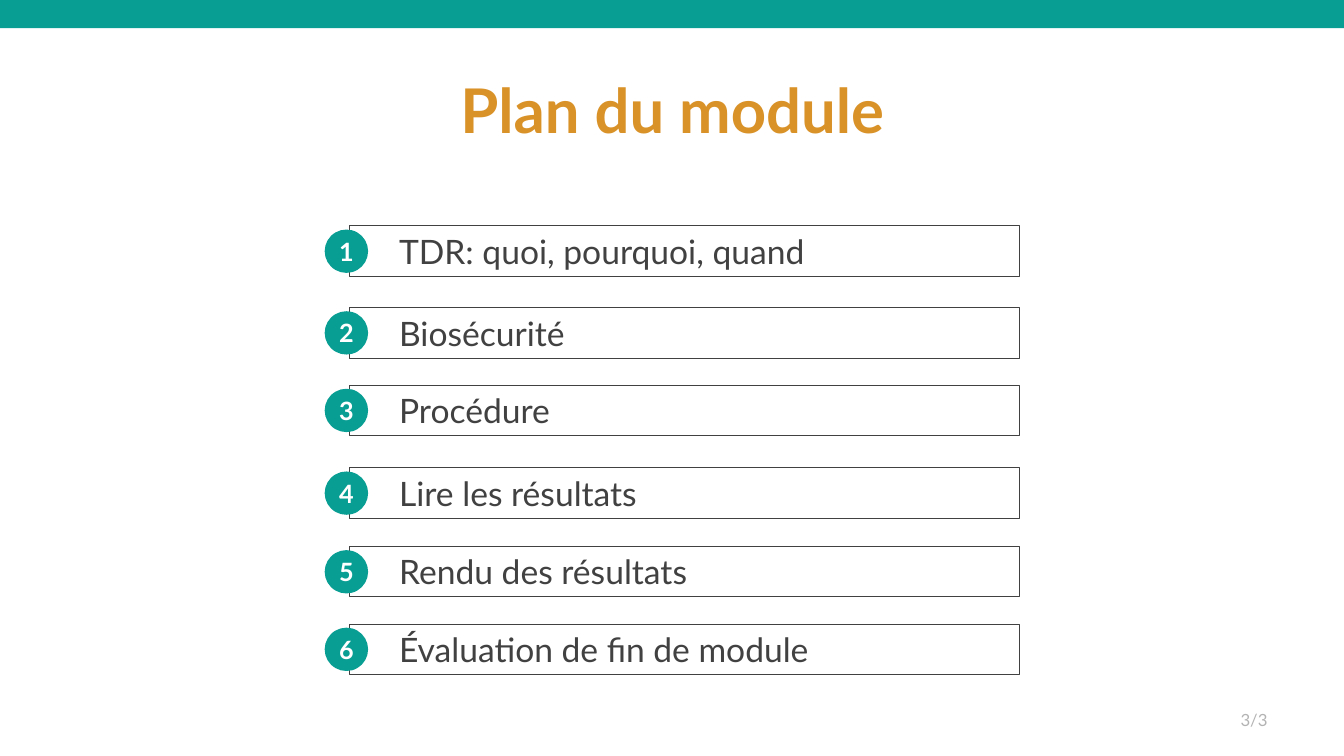
from dataclasses import dataclass

from pptx import Presentation
from pptx import util as u
from pptx.dml.color import RGBColor
from pptx.enum import shapes, text


@dataclass(frozen=True)
class Theme:
    font: str = "Lato"
    teal: str = "099E93"
    amber: str = "D99228"
    ink: str = "414141"
    white: str = "FFFFFF"
    grey: str = "B3B3B3"
    title_size: float = 44
    topic_size: float = 24
    number_size: float = 18
    page_size: float = 12
    outline: float = 0.5


@dataclass(frozen=True)
class Area:
    """Left, top, width and height in percent of the slide."""
    left: float
    top: float
    width: float
    height: float


@dataclass(frozen=True)
class Topic:
    label: str
    top: float


THEME = Theme()
SLIDE_WIDTH, SLIDE_HEIGHT = u.Inches(13.33), u.Inches(7.5)
TOPIC_INDENT = u.Inches(0.39)
TOPICS = [
    Topic("TDR: quoi, pourquoi, quand", 29.87),
    Topic("Biosécurité", 40.67),
    Topic("Procédure", 50.93),
    Topic("Lire les résultats", 61.87),
    Topic("Rendu des résultats", 72.27),
    Topic("Évaluation de fin de module", 82.53),
]


def place(area: Area) -> tuple[int, int, int, int]:
    return (int(SLIDE_WIDTH * area.left / 100), int(SLIDE_HEIGHT * area.top / 100),
            int(SLIDE_WIDTH * area.width / 100), int(SLIDE_HEIGHT * area.height / 100))


def add_block(parent, kind, area: Area, fill: str | None = None):
    """Add a filled shape, or an outlined one when no fill is given."""
    block = parent.add_shape(kind, *place(area))
    block.shadow.inherit = False
    if fill:
        block.fill.solid()
        block.fill.fore_color.rgb = RGBColor.from_string(fill)
        block.line.fill.background()
    else:
        block.fill.background()
        block.line.color.rgb = RGBColor.from_string(THEME.ink)
        block.line.width = u.Pt(THEME.outline)
    return block


def write(holder, wording: str, size: float, color: str, align, bold: bool = False,
          anchor=text.MSO_ANCHOR.MIDDLE, spacing: float = 1.0):
    frame = holder.text_frame
    frame.word_wrap = True
    frame.vertical_anchor = anchor
    paragraph = frame.paragraphs[0]
    paragraph.text = wording
    paragraph.alignment = align
    paragraph.line_spacing = spacing
    paragraph.font.name = THEME.font
    paragraph.font.size = u.Pt(size)
    paragraph.font.bold = bold
    paragraph.font.color.rgb = RGBColor.from_string(color)
    return paragraph


def add_topic(slide, number: int, topic: Topic) -> None:
    row = slide.shapes.add_group_shape().shapes
    bar = add_block(row, shapes.MSO_SHAPE.RECTANGLE, Area(26.03, topic.top, 49.81, 6.67))
    label = write(bar, topic.label, THEME.topic_size, THEME.ink,
                  text.PP_ALIGN.LEFT, anchor=text.MSO_ANCHOR.TOP)
    indent = label._p.get_or_add_pPr()
    indent.set("marL", str(TOPIC_INDENT))
    indent.set("indent", "0")

    badge = add_block(row, shapes.MSO_SHAPE.OVAL,
                      Area(24.16, topic.top + 0.5, 3.23, 5.73), THEME.teal)
    frame = badge.text_frame
    frame.margin_left = frame.margin_right = frame.margin_top = frame.margin_bottom = 0
    write(badge, str(number), THEME.number_size, THEME.white, text.PP_ALIGN.CENTER, bold=True)


def main() -> None:
    deck = Presentation()
    deck.slide_width, deck.slide_height = SLIDE_WIDTH, SLIDE_HEIGHT
    slide = deck.slides.add_slide(deck.slide_layouts[6])

    # Top band, bleeding over the slide edges
    add_block(slide.shapes, shapes.MSO_SHAPE.RECTANGLE,
              Area(-0.6, -1.2, 101.28, 4.93), THEME.teal)

    # Title
    title = slide.shapes.add_textbox(*place(Area(6.9, 5.33, 86.27, 19.33)))
    write(title, "Plan du module", THEME.title_size, THEME.amber,
          text.PP_ALIGN.CENTER, bold=True, spacing=0.9)

    # Numbered topics
    for number, topic in enumerate(TOPICS, start=1):
        add_topic(slide, number, topic)

    # Page number
    page = slide.shapes.add_textbox(*place(Area(72.54, 92.67, 22.51, 5.33)))
    write(page, "3/3", THEME.page_size, THEME.grey, text.PP_ALIGN.RIGHT, spacing=0.9)

    deck.save("out.pptx")


if __name__ == "__main__":
    main()
